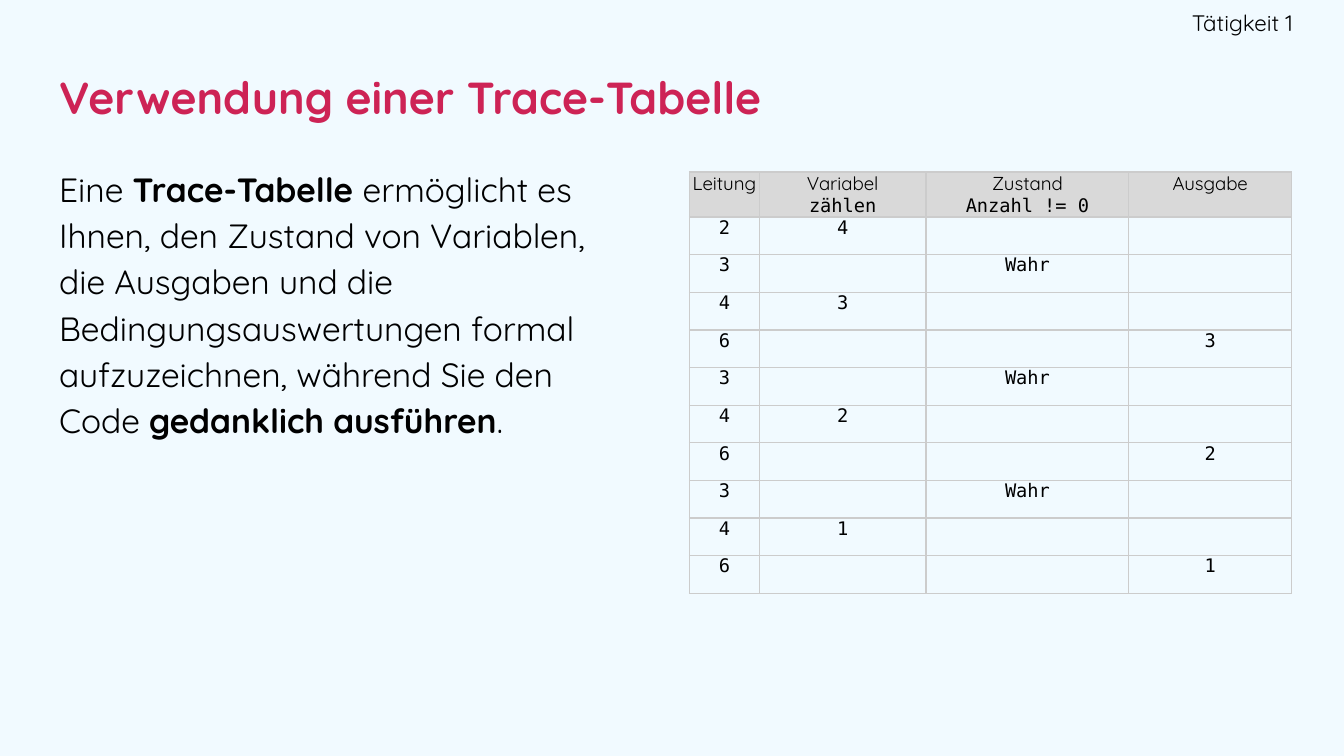
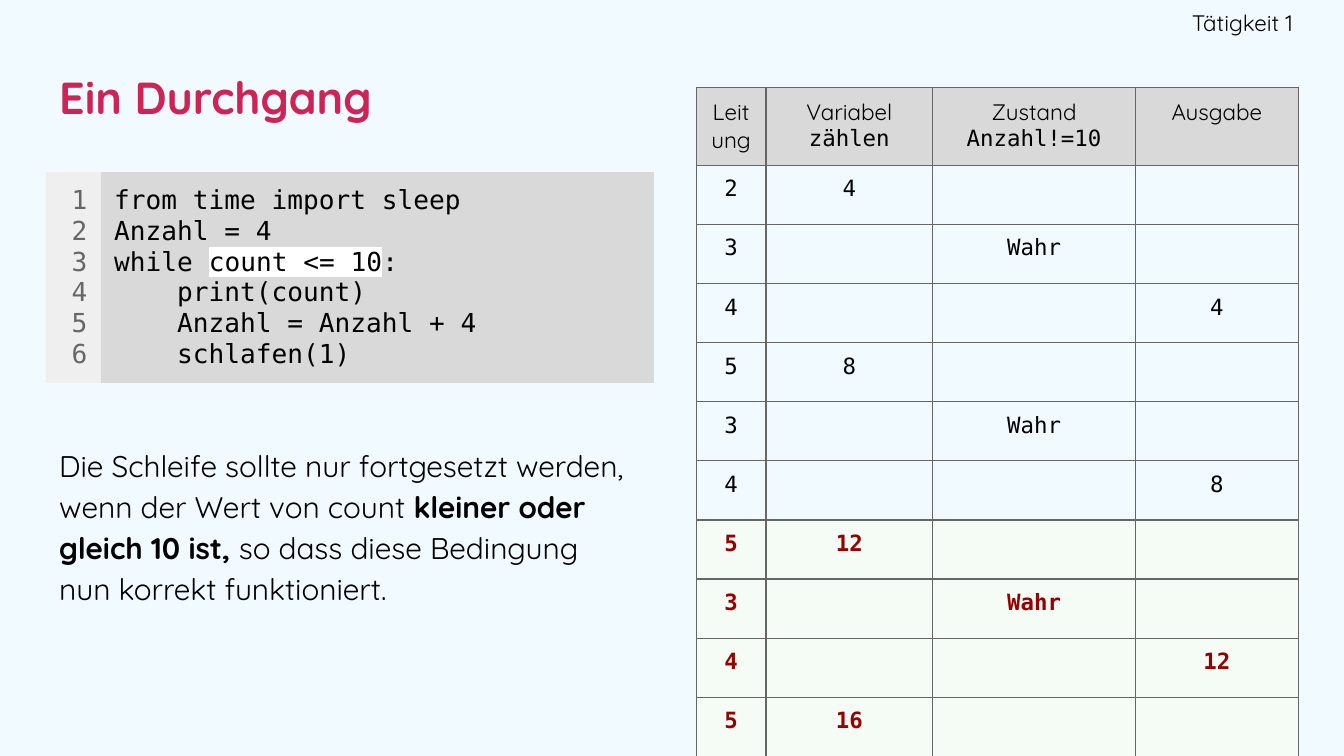
from lxml import etree
from pptx import Presentation
from pptx.dml.color import RGBColor
from pptx.enum.text import MSO_ANCHOR, MSO_AUTO_SIZE, PP_ALIGN
from pptx.oxml.ns import qn
from pptx.util import Pt

PX = 4572  # EMU per px, 200 px to the inch
LEFT, RIGHT, CENTER = PP_ALIGN.LEFT, PP_ALIGN.RIGHT, PP_ALIGN.CENTER
TOP, MIDDLE = MSO_ANCHOR.TOP, MSO_ANCHOR.MIDDLE
NO_AUTOFIT = MSO_AUTO_SIZE.NONE

SANS, MONO = "Quicksand", "DejaVu Sans Mono"
PALE_BLUE = RGBColor(0xF1, 0xFA, 0xFF)
CRIMSON = RGBColor(0xCD, 0x23, 0x55)
BLACK = RGBColor(0, 0, 0)
WHITE = RGBColor(0xFF, 0xFF, 0xFF)
DARK_RED = RGBColor(0x98, 0, 0)
PALE_GREEN = RGBColor(0xF5, 0xFB, 0xF5)
HEADER_GREY = RGBColor(0xD9, 0xD9, 0xD9)
GUTTER_GREY = RGBColor(0xEF, 0xEF, 0xEF)
GRID_GREY = RGBColor(0xCC, 0xCC, 0xCC)
DARK_GREY = RGBColor(0x66, 0x66, 0x66)

TWO_CONTENT = 3
PLAIN_TABLE = "{2D5ABB26-0587-4C30-8999-92F81FD0307C}"
TRACE_COLUMNS = (104, 248, 302, 242)
VARIABLE, CONDITION, OUTPUT = 1, 2, 3

# Each step: line number, column that changes, its value
COUNTDOWN_STEPS = [
    ("2", VARIABLE, "4"), ("3", CONDITION, "Wahr"),
    ("4", VARIABLE, "3"), ("6", OUTPUT, "3"), ("3", CONDITION, "Wahr"),
    ("4", VARIABLE, "2"), ("6", OUTPUT, "2"), ("3", CONDITION, "Wahr"),
    ("4", VARIABLE, "1"), ("6", OUTPUT, "1"),
]
COUNT_UP_STEPS = [
    ("2", VARIABLE, "4"), ("3", CONDITION, "Wahr"),
    ("4", OUTPUT, "4"), ("5", VARIABLE, "8"), ("3", CONDITION, "Wahr"),
    ("4", OUTPUT, "8"), ("5", VARIABLE, "12"), ("3", CONDITION, "Wahr"),
    ("4", OUTPUT, "12"), ("5", VARIABLE, "16"),
]
CODE = [
    ["from time import sleep"],
    ["Anzahl = 4"],
    ["while ", ("count <= 10", {"highlight": WHITE}), ":"],
    ["    print(count)"],
    ["    Anzahl = Anzahl + 4"],
    ["    schlafen(1)"],
]


def bold(text):
    return text, {"bold": True}


def mono(text):
    return text, {"font": MONO}


def add_colour(parent, color):
    etree.SubElement(parent, qn("a:srgbClr"), val=str(color))


def style_run(run, size, color, font=SANS, bold=False, highlight=None):
    run.font.size = Pt(size)
    run.font.color.rgb = color
    run.font.name = font
    run.font.bold = bold
    if highlight is not None:
        marker = etree.Element(qn("a:highlight"))
        add_colour(marker, highlight)
        run.font._element.find(qn("a:solidFill")).addnext(marker)


def write(frame, paragraphs, align=LEFT, **style):
    """Fill a frame; a run is a string or (string, style overrides)."""
    for number, runs in enumerate(paragraphs):
        paragraph = frame.add_paragraph() if number else frame.paragraphs[0]
        paragraph.alignment = align
        for item in runs:
            text, overrides = (item, {}) if isinstance(item, str) else item
            run = paragraph.add_run()
            run.text = text
            style_run(run, **{**style, **overrides})
        if not runs:
            etree.SubElement(paragraph._p, qn("a:endParaRPr"),
                             sz=str(style["size"] * 100))


def set_margins(target, left, top, right, bottom):
    target.margin_left, target.margin_top = left * PX, top * PX
    target.margin_right, target.margin_bottom = right * PX, bottom * PX


def set_borders(cell, color):
    properties = cell._tc.get_or_add_tcPr()
    for position, side in enumerate(("lnL", "lnR", "lnT", "lnB")):
        line = etree.Element(qn("a:" + side), w=str(Pt(0.75)))
        add_colour(etree.SubElement(line, qn("a:solidFill")), color)
        properties.insert(position, line)


class LessonDeck:
    def __init__(self):
        self.presentation = Presentation()
        self.presentation.slide_width = 2000 * PX
        self.presentation.slide_height = 1125 * PX
        fill = self.presentation.slide_master.background.fill
        fill.solid()
        fill.fore_color.rgb = PALE_BLUE
        self.slide = None

    def new_slide(self, title, activity="Tätigkeit 1"):
        layout = self.presentation.slide_layouts[TWO_CONTENT]
        self.slide = self.presentation.slides.add_slide(layout)
        self.placeholder(0, (68, 68, 1864, 152), [title], anchor=MIDDLE,
                         size=24, color=CRIMSON, bold=True)
        self.placeholder(2, (1496, 0, 428, 68), [activity], anchor=MIDDLE,
                         right_margin=0, align=RIGHT, size=12, color=BLACK)

    def placeholder(self, index, box, runs, anchor=TOP, right_margin=20,
                    **style):
        holder = self.slide.placeholders[index]
        holder.left, holder.top, holder.width, holder.height = (
            length * PX for length in box)
        frame = holder.text_frame
        frame.auto_size = NO_AUTOFIT
        frame.word_wrap = True
        frame.vertical_anchor = anchor
        set_margins(frame, 20, 20, right_margin, 20)
        write(frame, [runs], **style)
        paragraph = frame.paragraphs[0]
        paragraph.space_before = Pt(0)
        properties = paragraph._p.get_or_add_pPr()
        properties.set("marL", "0")
        properties.set("indent", "0")
        etree.SubElement(properties, qn("a:buNone"))
        return paragraph

    def body(self, top, height, size, runs):
        paragraph = self.placeholder(1, (68, top, 896, height), runs,
                                     size=size, color=BLACK)
        paragraph.line_spacing = 1.15
        paragraph.space_after = Pt(16)

    def table(self, left, top, widths, heights):
        frame = self.slide.shapes.add_table(
            len(heights), len(widths), left * PX, top * PX,
            sum(widths) * PX, sum(heights) * PX)
        table = frame.table
        table.first_row = table.horz_banding = False
        table._tbl.tblPr.find(qn("a:tableStyleId")).text = PLAIN_TABLE
        for column, width in zip(table.columns, widths):
            column.width = width * PX
        for row, height in zip(table.rows, heights):
            row.height = height * PX
        return table

    def cell(self, cell, paragraphs, margin, fill=None, border=None, **style):
        set_margins(cell, *[margin] * 4)
        if fill is None:
            cell.fill.background()
        else:
            cell.fill.solid()
            cell.fill.fore_color.rgb = fill
        if border is not None:
            set_borders(cell, border)
        write(cell.text_frame, paragraphs, **style)

    def trace_table(self, left, top, header_height, row_height, condition,
                    steps, new_from=None, **look):
        """Draw a trace; steps from index new_from on are marked as new."""
        table = self.table(left, top, TRACE_COLUMNS,
                           [header_height] + [row_height] * len(steps))
        header = [
            [["Leitung"]],
            [["Variabel"], [mono("zählen")]],
            [["Zustand"], [mono(condition)]],
            [["Ausgabe"]],
        ]
        for column, paragraphs in enumerate(header):
            self.cell(table.cell(0, column), paragraphs, fill=HEADER_GREY,
                      align=CENTER, color=BLACK, **look)
        for number, (line, changed, value) in enumerate(steps):
            is_new = new_from is not None and number >= new_from
            values = {0: line, changed: value}
            for column in range(len(TRACE_COLUMNS)):
                runs = [values[column]] if column in values else []
                self.cell(table.cell(number + 1, column), [runs],
                          fill=PALE_GREEN if is_new else None,
                          align=CENTER, font=MONO, bold=is_new,
                          color=DARK_RED if is_new else BLACK, **look)

    def code(self, left, top, lines):
        table = self.table(left, top, (82, 824), [312])
        numbers = [[str(number + 1)] for number in range(len(lines))]
        look = {"margin": 20, "size": 14, "font": MONO}
        self.cell(table.cell(0, 0), numbers, fill=GUTTER_GREY, align=RIGHT,
                  color=DARK_GREY, **look)
        self.cell(table.cell(0, 1), lines, fill=HEADER_GREY, color=BLACK,
                  **look)


def main():
    deck = LessonDeck()

    deck.new_slide("Verwendung einer Trace-Tabelle")
    deck.body(222, 800, 18, [
        "Eine ", bold("Trace-Tabelle "),
        "ermöglicht es Ihnen, den Zustand von Variablen, die Ausgaben und die "
        "Bedingungsauswertungen formal aufzuzeichnen, während Sie den Code ",
        bold("gedanklich ausführen"), ".",
    ])
    deck.trace_table(1026, 256, 67, 56, "Anzahl != 0", COUNTDOWN_STEPS,
                     margin=0, size=10, border=GRID_GREY)

    deck.new_slide("Ein Durchgang")
    deck.code(68, 256, CODE)
    deck.body(638, 316, 16, [
        "Die Schleife sollte nur fortgesetzt werden, wenn der Wert von count ",
        bold("kleiner oder gleich 10 ist, "),
        "so dass diese Bedingung nun korrekt funktioniert.",
    ])
    deck.trace_table(1036, 130, 116, 88, "Anzahl!=10", COUNT_UP_STEPS,
                     new_from=6, margin=16, size=12, border=DARK_GREY)

    deck.presentation.save("out.pptx")


if __name__ == "__main__":
    main()
